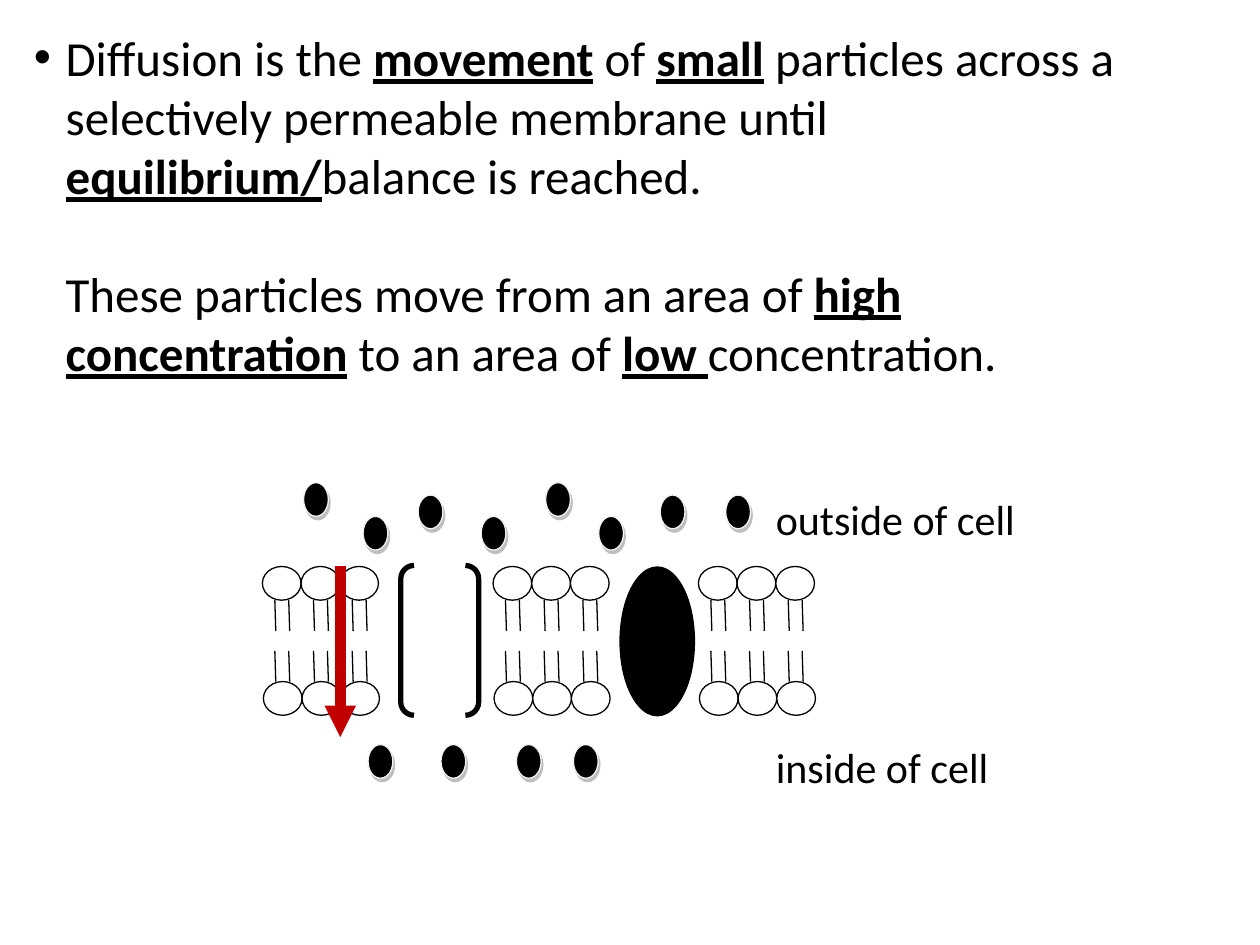
from lxml import etree
from pptx import Presentation
from pptx import util as u
from pptx.dml.color import RGBColor
from pptx.enum import shapes, text
from pptx.oxml import ns

BLACK = RGBColor(0x00, 0x00, 0x00)
WHITE = RGBColor(0xFF, 0xFF, 0xFF)
RED = RGBColor(0xC0, 0x00, 0x00)
PALE = RGBColor(0xF2, 0xF2, 0xF2)
SHADOW = "7F7F7F"

PLAIN = {"name": "Calibri", "size": u.Pt(28), "bold": False, "underline": False}
KEY = {**PLAIN, "bold": True, "underline": True}
LABEL = {**PLAIN, "size": u.Pt(24)}

HEAD_W, HEAD_H = 0.78, 0.68
TAIL_LENGTH, SLANT = 0.62, 0.02
TAIL_OFFSETS = (0.25, 0.53)
UPPER_Y, LOWER_Y = 11.42, 13.74
HEADS_PER_GROUP = 3
GROUP_LEFTS = (5.29, 9.94, 14.08)

PARAGRAPHS = [
    [("Diffusion is the ", PLAIN), ("movement", KEY), (" of ", PLAIN),
     ("small", KEY),
     (" particles across a selectively permeable membrane until ", PLAIN),
     ("equilibrium/", KEY), ("balance is reached.", PLAIN)],
    [("These particles move from an area of ", PLAIN),
     ("high concentration", KEY), (" to an area of ", PLAIN),
     ("low ", KEY), ("concentration.", PLAIN)],
]
PARTICLES = {  # top: lefts
    9.73: (6.12, 11.0),
    9.98: (8.43, 13.31, 14.63),
    10.41: (7.32, 9.7, 12.07),
    15.01: (7.42, 8.89, 10.41, 11.56),
}


class Diagram:
    def __init__(self, slide):
        self.s = slide

    def add_run(self, p, words, fmt):
        r = p.add_run()
        r.text = words
        for name, value in fmt.items():
            setattr(r.font, name, value)
        r.font.color.rgb = BLACK

    def body(self, box, paragraphs):
        sp = self.s.placeholders[1]
        for name, value in zip(("left", "top", "width", "height"), box):
            setattr(sp, name, u.Cm(value))
        tf = sp.text_frame
        tf.auto_size = text.MSO_AUTO_SIZE.NONE
        tf.vertical_anchor = text.MSO_ANCHOR.TOP
        for i, runs in enumerate(paragraphs):
            p = tf.add_paragraph() if i else tf.paragraphs[0]
            p.space_before = u.Pt(34 if i else 0)
            pPr = p._p.get_or_add_pPr()
            pPr.set("marL", str(u.Cm(0.64)))
            pPr.set("indent", str(0 if i else -u.Cm(0.64)))
            if i:
                etree.SubElement(pPr, ns.qn("a:buNone"))
            for words, fmt in runs:
                self.add_run(p, words, fmt)

    def shape(self, kind, box, fill=WHITE, line=BLACK, width=0.75):
        sp = self.s.shapes.add_shape(kind, *map(u.Cm, box))
        sp.shadow.inherit = False
        if fill is None:
            sp.fill.background()
        else:
            sp.fill.solid()
            sp.fill.fore_color.rgb = fill
        sp.line.color.rgb = line
        sp.line.width = u.Pt(width)
        return sp

    def oval(self, *box, **style):
        return self.shape(shapes.MSO_SHAPE.OVAL, box, **style)

    def line(self, x1, y1, x2, y2, color=BLACK, width=0.75, arrow=False):
        c = self.s.shapes.add_connector(
            shapes.MSO_CONNECTOR.STRAIGHT, *map(u.Cm, (x1, y1, x2, y2)))
        c.line.color.rgb = color
        c.line.width = u.Pt(width)
        if arrow:
            etree.SubElement(c.line._get_or_add_ln(), ns.qn("a:tailEnd"),
                             type="triangle")
        etree.SubElement(c._element.spPr, ns.qn("a:effectLst"))

    def lipid(self, x, y, tail_y, slant):
        """Draw a head with two tails that run from tail_y inwards."""
        self.oval(x, y, HEAD_W, HEAD_H)
        end_y = tail_y + (TAIL_LENGTH if slant > 0 else -TAIL_LENGTH)
        for offset in TAIL_OFFSETS:
            self.line(x + offset, tail_y, x + offset + slant, end_y)

    def lipid_group(self, left):
        for i in range(HEADS_PER_GROUP):
            x = left + i * HEAD_W
            self.lipid(x + SLANT, LOWER_Y, LOWER_Y, -SLANT)
            self.lipid(x, UPPER_Y, UPPER_Y + HEAD_H, SLANT)

    def particle(self, x, y):
        sp = self.oval(x, y, 0.5, 0.68, fill=BLACK, line=PALE, width=0)
        effects = sp._element.spPr.find(ns.qn("a:effectLst"))
        shadow = etree.SubElement(effects, ns.qn("a:outerShdw"),
                                  dist=str(u.Pt(2.2)), dir=str(63 * 60000),
                                  algn="ctr", rotWithShape="0")
        color = etree.SubElement(shadow, ns.qn("a:srgbClr"), val=SHADOW)
        etree.SubElement(color, ns.qn("a:alpha"), val="50000")

    def label(self, words, *box):
        sp = self.shape(shapes.MSO_SHAPE.RECTANGLE, box, line=WHITE)
        tf = sp.text_frame
        tf.word_wrap = True
        tf.vertical_anchor = text.MSO_ANCHOR.TOP
        p = tf.paragraphs[0]
        p.alignment = text.PP_ALIGN.LEFT
        self.add_run(p, words, LABEL)


def main():
    prs = Presentation()
    prs.slide_width, prs.slide_height = u.Cm(25.4), u.Cm(19.05)
    s = prs.slides.add_slide(prs.slide_layouts[1])
    title = s.shapes.title._element
    title.getparent().remove(title)

    d = Diagram(s)
    d.body((0.43, 0.43, 22.63, 8.2), PARAGRAPHS)
    for left in GROUP_LEFTS:
        d.lipid_group(left)
    channel = d.shape(shapes.MSO_SHAPE.DOUBLE_BRACKET,
                      (8.08, 11.4, 1.57, 3.02), fill=None, width=3)
    channel.adjustments[0] = 0.17
    d.oval(12.5, 11.43, 1.5, 3, fill=BLACK)
    d.line(6.86, 11.4, 6.86, 14.86, color=RED, width=6, arrow=True)
    for y, lefts in PARTICLES.items():
        for x in lefts:
            d.particle(x, y)
    d.label("outside of cell", 15.39, 9.83, 6.2, 1.3)
    d.label("inside of cell", 15.39, 14.83, 4.93, 1.3)
    prs.save("out.pptx")


if __name__ == "__main__":
    main()
